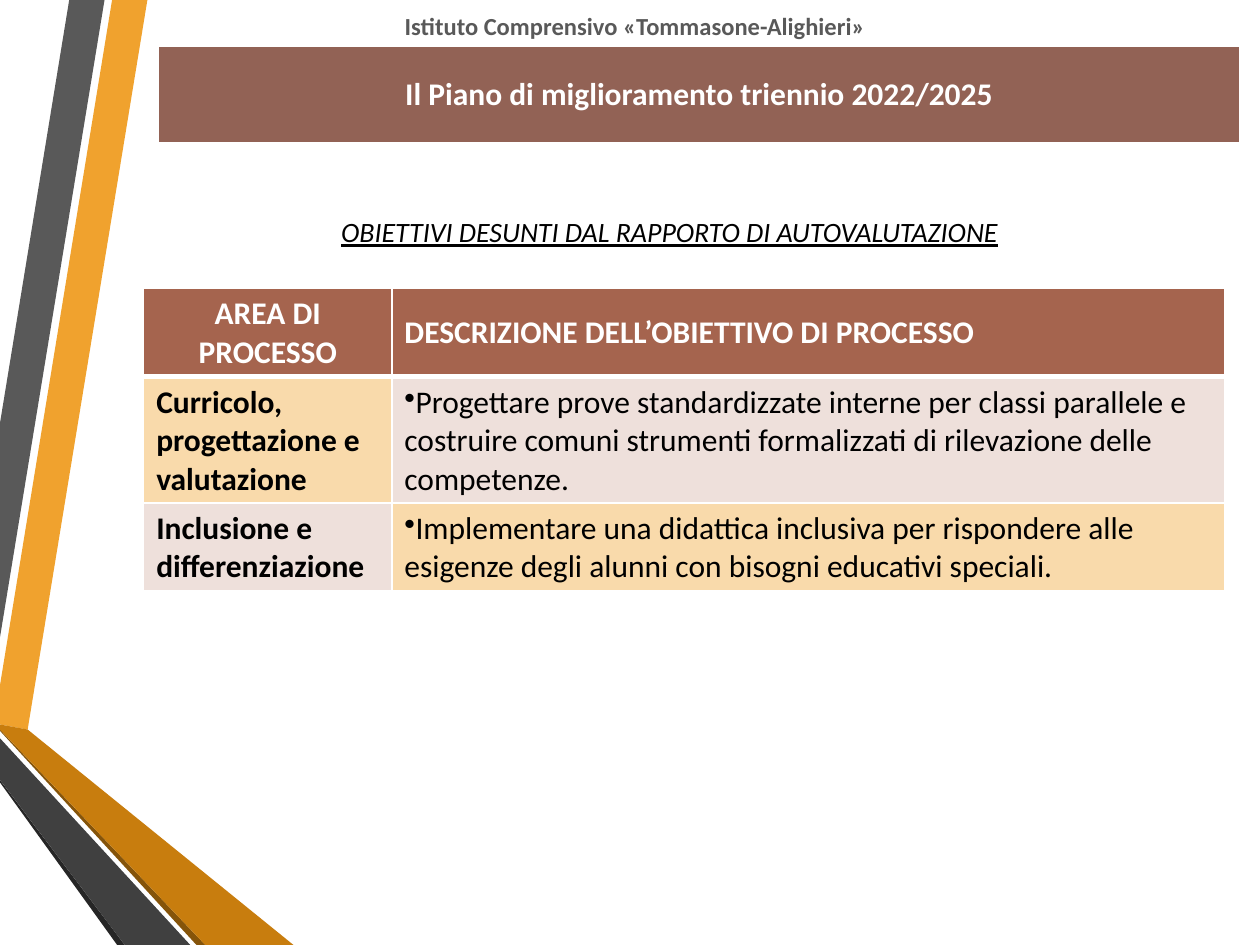
from lxml import etree
from pptx import Presentation, util as u
from pptx.dml.color import RGBColor
from pptx.enum import text
from pptx.oxml.ns import qn

WHITE = RGBColor(0xFF, 0xFF, 0xFF)
BLACK = RGBColor(0x00, 0x00, 0x00)
GREY = RGBColor(0x59, 0x59, 0x59)
CHARCOAL = RGBColor(0x40, 0x40, 0x40)
DARK = RGBColor(0x26, 0x26, 0x26)
ORANGE = RGBColor(0xF0, 0xA2, 0x2E)
AMBER = RGBColor(0xC8, 0x7D, 0x0E)
UMBER = RGBColor(0x85, 0x54, 0x0A)
BAND = RGBColor(0x92, 0x62, 0x55)
HEADER = RGBColor(0xA5, 0x64, 0x4E)
SAND = RGBColor(0xF9, 0xDA, 0xAB)
ROSE = RGBColor(0xEE, 0xE0, 0xDB)

CENTER = text.PP_ALIGN.CENTER
LEFT = text.PP_ALIGN.LEFT
UNIT = u.Inches(0.25)  # the slide is a grid of 40 columns by 30 rows


def grid(*values):
    return [round(v * UNIT) for v in values]


def write(tf, words, size=18, color=BLACK, bold=False, italic=False,
          underline=False, align=LEFT, bullet=None):
    tf.word_wrap = True
    p = tf.paragraphs[0]
    p.alignment = align
    if bullet:
        p_pr = p._p.get_or_add_pPr()
        etree.SubElement(p_pr, qn("a:buChar")).set("char", bullet)
    r = p.add_run()
    r.text = words
    font = r.font
    font.name, font.size, font.color.rgb = "Calibri", u.Pt(size), color
    font.bold, font.italic, font.underline = bold, italic, underline


def set_borders(cell, bottom):
    """White cell borders, one point wide except at the bottom."""
    tc_pr = cell._tc.get_or_add_tcPr()
    for side, width in (("L", 1), ("R", 1), ("T", 1), ("B", bottom)):
        ln = etree.SubElement(tc_pr, qn(f"a:ln{side}"), w=str(u.Pt(width)))
        fill = etree.SubElement(ln, qn("a:solidFill"))
        etree.SubElement(fill, qn("a:srgbClr"), val=str(WHITE))


class Deck:
    def __init__(self):
        self.prs = Presentation()
        self.prs.slide_width, self.prs.slide_height = grid(40, 30)
        self.s = self.prs.slides.add_slide(self.prs.slide_layouts[5])

    def title(self, words, box, **style):
        sp = self.s.shapes.title
        sp.left, sp.top, sp.width, sp.height = grid(*box)
        self.fill_box(sp.text_frame, words, style)

    def label(self, words, box, **style):
        sp = self.s.shapes.add_textbox(*grid(*box))
        self.fill_box(sp.text_frame, words, style)

    def fill_box(self, tf, words, style):
        write(tf, words, **style)
        tf.vertical_anchor = text.MSO_ANCHOR.TOP
        tf.auto_size = text.MSO_AUTO_SIZE.SHAPE_TO_FIT_TEXT

    def ribbon(self, color, *points):
        start, *rest = [grid(*point) for point in points]
        builder = self.s.shapes.build_freeform(*start)
        builder.add_line_segments(rest, close=True)
        sp = builder.convert_to_shape()
        sp.shadow.inherit = False
        sp.fill.solid()
        sp.fill.fore_color.rgb = color
        sp.line.fill.background()

    def table(self, left, top, widths, heights, rows, borders=True):
        """Each cell of rows is (words, fill, style)."""
        table = self.s.shapes.add_table(
            len(heights), len(widths),
            *grid(left, top, sum(widths), sum(heights))).table
        for column, width in zip(table.columns, grid(*widths)):
            column.width = width
        for i, (row, height) in enumerate(zip(table.rows, grid(*heights))):
            row.height = height
            for cell, (words, fill, style) in zip(row.cells, rows[i]):
                if borders:
                    set_borders(cell, bottom=3 if i == 0 else 1)
                cell.fill.solid()
                cell.fill.fore_color.rgb = fill
                cell.vertical_anchor = text.MSO_ANCHOR.MIDDLE
                write(cell.text_frame, words, **style)


def main():
    deck = Deck()
    deck.ribbon(ORANGE, (0, 21.76), (0, 23), (0.88, 23.16), (4.68, 0), (3.56, 0))
    deck.ribbon(GREY, (3.32, 0), (2.2, 0), (0, 13.44), (0, 20.24))
    deck.ribbon(DARK, (0, 24.76), (0, 24.84), (3.72, 30), (3.96, 30))
    deck.ribbon(UMBER, (0, 23.16), (0, 23.2), (6.24, 30), (6.52, 30))
    deck.ribbon(AMBER, (0, 23.16), (6.52, 30), (9.32, 30), (0.88, 23.16), (0, 23))
    deck.ribbon(CHARCOAL, (0, 24.76), (3.96, 30), (6.04, 30), (0, 23.44))

    deck.title("OBIETTIVI DESUNTI DAL RAPPORTO DI AUTOVALUTAZIONE",
               (4.88, 6.6, 32.76, 1.48), size=16, italic=True,
               underline=True, align=CENTER)

    head = dict(color=WHITE, bold=True)
    area = dict(bold=True)
    goal = dict(bullet="•")
    deck.table(4.56, 9.16, (7.88, 26.44), (2.72, 4, 2.8), [
        [("AREA DI PROCESSO", HEADER, dict(head, align=CENTER)),
         ("DESCRIZIONE DELL’OBIETTIVO DI PROCESSO", HEADER, head)],
        [("Curricolo, progettazione e valutazione", SAND, area),
         ("Progettare prove standardizzate interne per classi parallele e "
          "costruire comuni strumenti formalizzati di rilevazione delle "
          "competenze.", ROSE, goal)],
        [("Inclusione e differenziazione", ROSE, area),
         ("Implementare una didattica inclusiva per rispondere alle esigenze "
          "degli alunni con bisogni educativi speciali.", SAND, goal)],
    ])

    deck.label("Istituto Comprensivo «Tommasone-Alighieri»",
               (4.56, 0.16, 31.2, 1.36), size=14, color=GREY, bold=True,
               align=CENTER)
    deck.table(5.04, 1.48, (34.32,), (3.04,), [
        [("Il Piano di miglioramento triennio 2022/2025", BAND,
          dict(head, align=CENTER))],
    ], borders=False)
    deck.prs.save("out.pptx")


if __name__ == "__main__":
    main()
